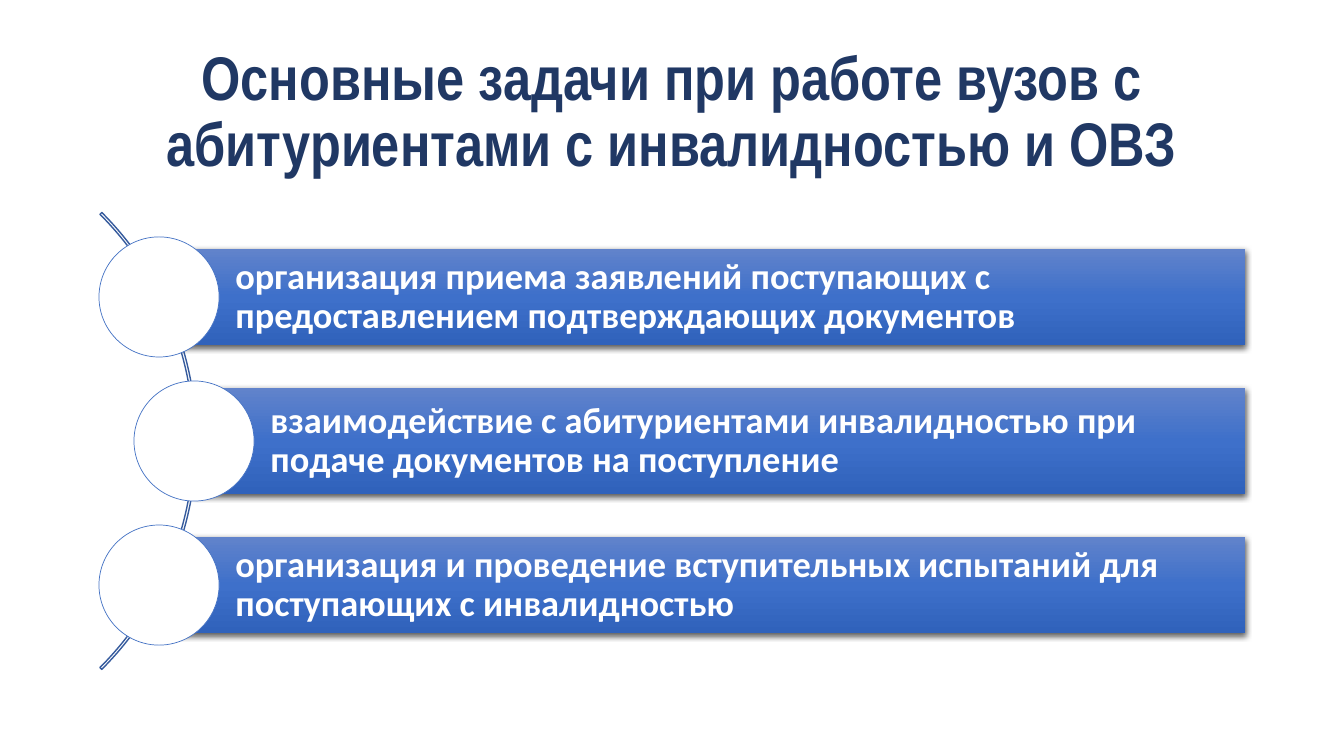
from pptx import Presentation
from pptx.dml.color import RGBColor
from pptx.enum.shapes import MSO_SHAPE
from pptx.enum.text import MSO_ANCHOR, MSO_AUTO_SIZE, PP_ALIGN
from pptx.oxml import parse_xml
from pptx.oxml.ns import nsdecls, qn
from pptx.util import Pt


def tint(code):
    return RGBColor.from_string(code)


def apply(target, values):
    for name, value in values.items():
        setattr(target, name, value)


class Deck:
    head = {"name": "Arial Narrow", "size": Pt(44), "bold": True}
    body = {"name": "Calibri", "size": Pt(26), "bold": True}
    inset = {"margin_left": Pt(54.5), "margin_top": Pt(5),
             "margin_right": Pt(5), "margin_bottom": Pt(5)}
    ramp = ((0, "6183CB"), (50, "3E70CA"), (100, "3062BB"))

    def __init__(self):
        self.show = Presentation()
        apply(self.show, {"slide_width": Pt(960), "slide_height": Pt(540)})
        self.slide = self.show.slides.add_slide(self.show.slide_layouts[5])

    def label(self, shape, text, font, ink, align):
        frame = shape.text_frame
        apply(frame, {"text": text, "word_wrap": True,
                      "auto_size": MSO_AUTO_SIZE.NONE,
                      "vertical_anchor": MSO_ANCHOR.MIDDLE})
        para = frame.paragraphs[0]
        apply(para, {"alignment": align, "line_spacing": 0.9})
        face = para.runs[0].font
        apply(face, font)
        face.color.rgb = tint(ink)

    def title(self, text, left, top, width, height):
        shape = self.slide.shapes.title
        apply(shape, {"left": Pt(left), "top": Pt(top),
                      "width": Pt(width), "height": Pt(height)})
        self.label(shape, text, self.head, "203864", PP_ALIGN.CENTER)

    def shape(self, kind, left, top, width, height):
        shape = self.slide.shapes.add_shape(
            kind, Pt(left), Pt(top), Pt(width), Pt(height))
        shape.shadow.inherit = False
        return shape

    def edge(self, shape, ink, width):
        shape.line.color.rgb = tint(ink)
        shape.line.width = Pt(width)

    def arc(self, left, top, size):
        shape = self.shape(MSO_SHAPE.BLOCK_ARC, left, top, size, size)
        for spot, value in enumerate((189, 27, 0.004)):
            shape.adjustments[spot] = value
        shape.fill.background()
        self.edge(shape, "365B9D", 1)

    def disc(self, left, top, size):
        shape = self.shape(MSO_SHAPE.OVAL, left, top, size, size)
        shape.fill.solid()
        shape.fill.fore_color.rgb = tint("FFFFFF")
        self.edge(shape, "4472C4", 0.5)

    def bar(self, text, left, top, width, height):
        shape = self.shape(MSO_SHAPE.RECTANGLE, left, top, width, height)
        shape.line.fill.background()
        shape.fill.gradient()
        shape.fill.gradient_angle = 270
        props = shape._element.spPr
        stops = props.find(qn("a:gradFill")).find(qn("a:gsLst"))
        for stop in list(stops):
            stops.remove(stop)
        for place, code in self.ramp:
            stops.append(parse_xml(
                f'<a:gs {nsdecls("a")} pos="{place * 1000}">'
                f'<a:srgbClr val="{code}"/></a:gs>'))
        props.find(qn("a:effectLst")).append(parse_xml(
            f'<a:outerShdw {nsdecls("a")} blurRad="{Pt(4.5)}" '
            f'dist="{Pt(1.5)}" dir="5400000" algn="ctr" rotWithShape="0">'
            '<a:srgbClr val="000000"><a:alpha val="63000"/></a:srgbClr>'
            '</a:outerShdw>'))
        apply(shape.text_frame, self.inset)
        self.label(shape, text, self.body, "FFFFFF", PP_ALIGN.LEFT)


def main():
    deck = Deck()
    deck.title("Основные задачи при работе вузов с абитуриентами "
               "с инвалидностью и ОВЗ", 66, 29, 828, 104.4)
    deck.arc(-321.2, 84.2, 461.5)
    tasks = (
        ("организация приема заявлений поступающих с предоставлением "
         "подтверждающих документов", 70.7, 68.6),
        ("взаимодействие с абитуриентами инвалидностью при подаче "
         "документов на поступление", 95.7, 75.6),
        ("организация и проведение вступительных испытаний для "
         "поступающих с инвалидностью", 70.7, 68.6),
    )
    size, right, first, pitch = 85.8, 889.2, 212.1, 102.9
    for row, (text, left, height) in enumerate(tasks):
        mid = first + row * pitch
        start = left + size / 2
        deck.bar(text, start, mid - height / 2, right - start, height)
        deck.disc(left, mid - size / 2, size)
    deck.show.save("out.pptx")


if __name__ == "__main__":
    main()
